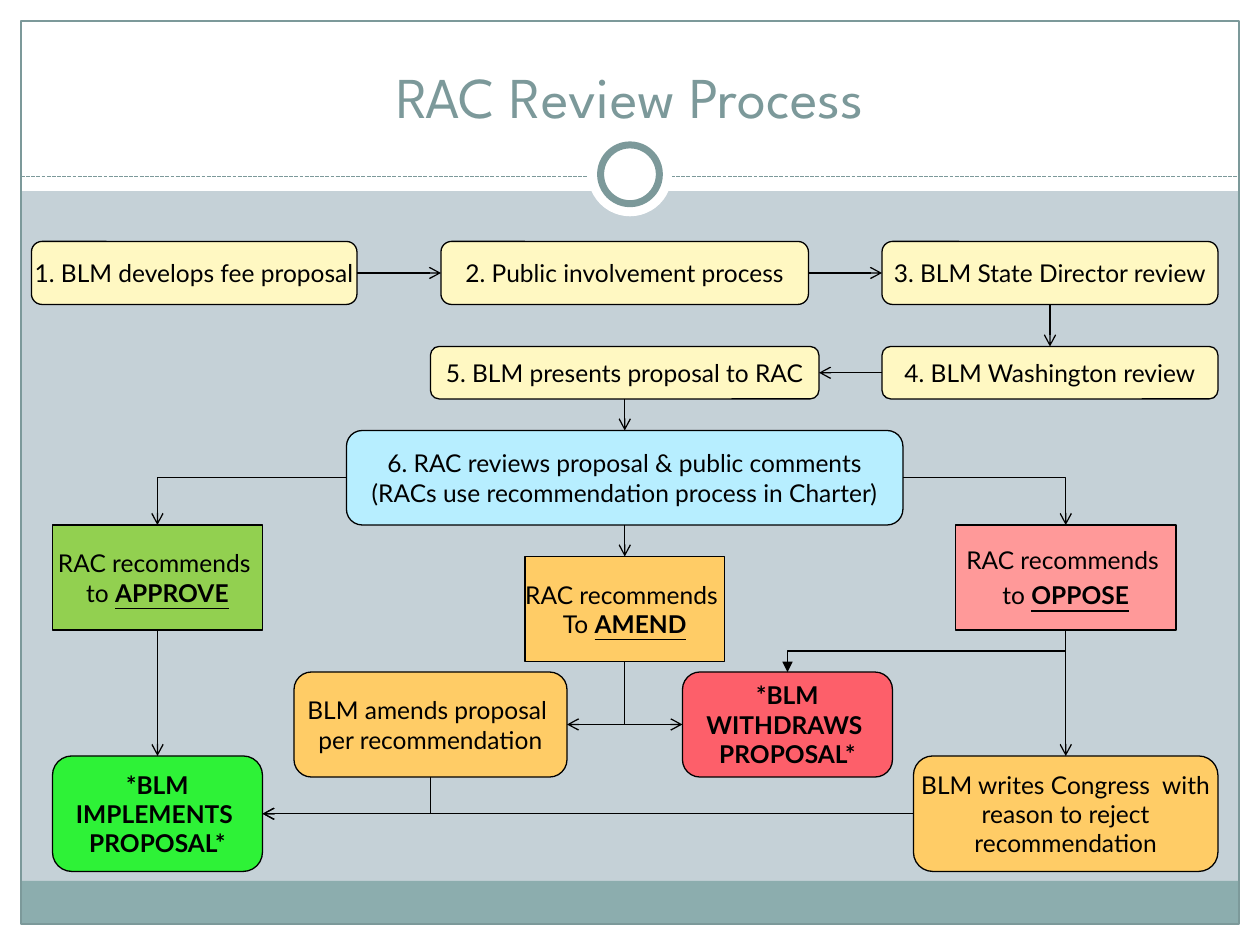
from lxml.etree import SubElement
from pptx import Presentation
from pptx.dml.color import RGBColor
from pptx.enum.dml import MSO_LINE
from pptx.enum.shapes import MSO_CONNECTOR as LINK, MSO_SHAPE as SHAPE
from pptx.enum.text import MSO_ANCHOR as ANCHOR, MSO_AUTO_SIZE as AUTO_SIZE, PP_ALIGN as ALIGN
from pptx.oxml.ns import qn
from pptx.util import Emu, Pt

PX = 7620  # 120 px to the inch

WHITE = RGBColor(0xFF, 0xFF, 0xFF)
BLACK = RGBColor(0x00, 0x00, 0x00)
MIST = RGBColor(0xC5, 0xD1, 0xD7)
TEAL = RGBColor(0x8C, 0xAD, 0xAE)
SLATE = RGBColor(0x7C, 0x99, 0x9A)
CREAM = RGBColor(0xFF, 0xF8, 0xC2)
SKY = RGBColor(0xB7, 0xEE, 0xFF)
AMBER = RGBColor(0xFF, 0xCC, 0x66)
OLIVE = RGBColor(0x92, 0xD0, 0x50)
GREEN = RGBColor(0x2E, 0xF2, 0x37)
PINK = RGBColor(0xFF, 0x99, 0x99)
RED = RGBColor(0xFD, 0x5F, 0x6A)

# Connection sites of a box
TOP, LEFT, BOTTOM, RIGHT = range(4)


class FlowSlide:
    text_font = "Lato"
    title_font = "League Spartan"
    text_size = Pt(14)
    title_size = Pt(33)
    line_width = Pt(0.75)

    def __init__(self, deck):
        self.page = deck.slides.add_slide(deck.slide_layouts[5])
        fill = self.page.background.fill
        fill.solid()
        fill.fore_color.rgb = MIST

    def add_run(self, para, text, font, size, color, bold=False, underline=False):
        span = para.add_run()
        span.text = text
        span.font.name = font
        span.font.size = size
        span.font.color.rgb = color
        span.font.bold = bold
        span.font.underline = underline

    def title(self, text, x, y, width, height):
        holder = self.page.shapes.title
        holder.left, holder.top = Emu(x * PX), Emu(y * PX)
        holder.width, holder.height = Emu(width * PX), Emu(height * PX)
        frame = holder.text_frame
        frame.auto_size = AUTO_SIZE.NONE
        frame.vertical_anchor = ANCHOR.BOTTOM
        para = frame.paragraphs[0]
        para.alignment = ALIGN.CENTER
        self.add_run(para, text, self.title_font, self.title_size, SLATE)
        # Bring the title in front of the backdrop
        holder.element.getparent().append(holder.element)

    def shape(self, kind, x, y, width, height, fill=None, line=None, weight=None):
        box = self.page.shapes.add_shape(kind, *(Emu(v * PX) for v in (x, y, width, height)))
        box.shadow.inherit = False
        if fill is None:
            box.fill.background()
        else:
            box.fill.solid()
            box.fill.fore_color.rgb = fill
        if line is None:
            box.line.fill.background()
        else:
            box.line.color.rgb = line
            box.line.width = weight or self.line_width
        return box

    def box(self, x, y, width, height, fill, lines, bold=False,
            kind=SHAPE.FLOWCHART_ALTERNATE_PROCESS):
        box = self.shape(kind, x, y, width, height, fill, BLACK)
        frame = box.text_frame
        frame.word_wrap = False
        frame.vertical_anchor = ANCHOR.MIDDLE
        for i, text in enumerate(lines):
            para = frame.add_paragraph() if i else frame.paragraphs[0]
            para.alignment = ALIGN.CENTER
            self.add_run(para, text, self.text_font, self.text_size, BLACK, bold)
        return box

    def decision(self, x, y, width, height, fill, lead, verdict, space_before=0):
        box = self.box(x, y, width, height, fill, ["RAC recommends ", lead], kind=SHAPE.RECTANGLE)
        paras = box.text_frame.paragraphs
        self.add_run(paras[-1], verdict, self.text_font, self.text_size, BLACK, True, True)
        for para in paras:
            para.space_before = Pt(space_before)
        return box

    def line(self, kind, start, end, color, arrow=None, dash=None):
        line = self.page.shapes.add_connector(kind, *(Emu(v) for v in (*start, *end)))
        line.line.color.rgb = color
        line.line.width = self.line_width
        if dash:
            line.line.dash_style = dash
        properties = line.element.spPr
        if arrow:
            SubElement(properties.find(qn("a:ln")), qn("a:tailEnd"), type=arrow)
        SubElement(properties, qn("a:effectLst"))
        return line

    @staticmethod
    def site(box, side):
        across = {LEFT: 0, RIGHT: box.width}.get(side, box.width // 2)
        down = {TOP: 0, BOTTOM: box.height}.get(side, box.height // 2)
        return box.left + across, box.top + down

    def arrow(self, source, out_side, target, in_side, head="arrow"):
        start, end = self.site(source, out_side), self.site(target, in_side)
        dx, dy = end[0] - start[0], end[1] - start[1]
        if dx == 0 or dy == 0:
            link = self.line(LINK.STRAIGHT, start, end, BLACK, head)
            link.begin_connect(source, out_side)
            link.end_connect(target, in_side)
            return
        turned = out_side == BOTTOM
        if turned:
            # Lay the elbow out sideways about its centre, then turn it to leave downwards
            mid_x, mid_y = (start[0] + end[0]) // 2, (start[1] + end[1]) // 2
            start = mid_x - dy // 2, mid_y + dx // 2
            end = mid_x + dy // 2, mid_y - dx // 2
        link = self.line(LINK.ELBOW, start, end, BLACK, head)
        properties = link.element.spPr
        if turned:
            properties.find(qn("a:xfrm")).set("rot", str(90 * 60000))
        if not (turned and in_side == TOP):
            properties.find(qn("a:prstGeom")).set("prst", "bentConnector2")


def main():
    deck = Presentation()
    deck.slide_width, deck.slide_height = Emu(1200 * PX), Emu(900 * PX)
    slide = FlowSlide(deck)

    # Backdrop: white margins and header, footer band, frame, divider and ring
    for area in ((0, 880, 1200, 20), (0, 0, 1200, 182), (0, 0, 20, 900), (1180, 0, 20, 900)):
        slide.shape(SHAPE.RECTANGLE, *area, WHITE)
    slide.shape(SHAPE.RECTANGLE, 20, 839, 1160, 41, TEAL)
    slide.shape(SHAPE.RECTANGLE, 20, 20, 1160, 860, line=SLATE)
    slide.line(LINK.STRAIGHT, (20 * PX, 168 * PX), (1180 * PX, 168 * PX), SLATE,
               dash=MSO_LINE.SQUARE_DOT)
    slide.shape(SHAPE.OVAL, 560, 126, 80, 80, WHITE)
    slide.shape(SHAPE.OVAL, 572, 138, 56, 56, WHITE, SLATE, Pt(4))
    slide.title("RAC Review Process", 40, 30, 1120, 100)

    # Numbered steps
    develop = slide.box(30, 230, 310, 60, CREAM, ["1. BLM develops fee proposal"])
    public = slide.box(420, 230, 350, 60, CREAM, ["2. Public involvement process"])
    state = slide.box(840, 230, 320, 60, CREAM, ["3. BLM State Director review"])
    washington = slide.box(840, 330, 320, 50, CREAM, ["4. BLM Washington review"])
    present = slide.box(410, 330, 370, 50, CREAM, ["5. BLM presents proposal to RAC"])
    review = slide.box(330, 410, 530, 90, SKY, [
        "6. RAC reviews proposal & public comments",
        "(RACs use recommendation process in Charter)"])

    # Recommendations
    approve = slide.decision(50, 500, 200, 100, OLIVE, "to ", "APPROVE")
    amend = slide.decision(500, 530, 190, 100, AMBER, "To ", "AMEND")
    oppose = slide.decision(910, 500, 210, 100, PINK, "to ", "OPPOSE", space_before=3)

    # Outcomes
    revise = slide.box(280, 640, 260, 100, AMBER, ["BLM amends proposal ", "per recommendation"])
    withdraw = slide.box(650, 640, 200, 100, RED, ["*BLM", "WITHDRAWS ", "PROPOSAL*"], bold=True)
    implement = slide.box(50, 720, 200, 110, GREEN, ["*BLM", "IMPLEMENTS ", "PROPOSAL*"], bold=True)
    congress = slide.box(870, 720, 290, 110, AMBER, [
        "BLM writes Congress  with", "reason to reject", "recommendation"])

    # Arrows
    for route in (
        (develop, RIGHT, public, LEFT),
        (public, RIGHT, state, LEFT),
        (state, BOTTOM, washington, TOP),
        (washington, LEFT, present, RIGHT),
        (present, BOTTOM, review, TOP),
        (review, LEFT, approve, TOP),
        (review, BOTTOM, amend, TOP),
        (review, RIGHT, oppose, TOP),
        (approve, BOTTOM, implement, TOP),
        (amend, BOTTOM, revise, RIGHT),
        (amend, BOTTOM, withdraw, LEFT),
        (oppose, BOTTOM, withdraw, TOP, "triangle"),
        (oppose, BOTTOM, congress, TOP),
        (revise, BOTTOM, implement, RIGHT),
        (congress, LEFT, implement, RIGHT),
    ):
        slide.arrow(*route)

    deck.save("out.pptx")


if __name__ == "__main__":
    main()
